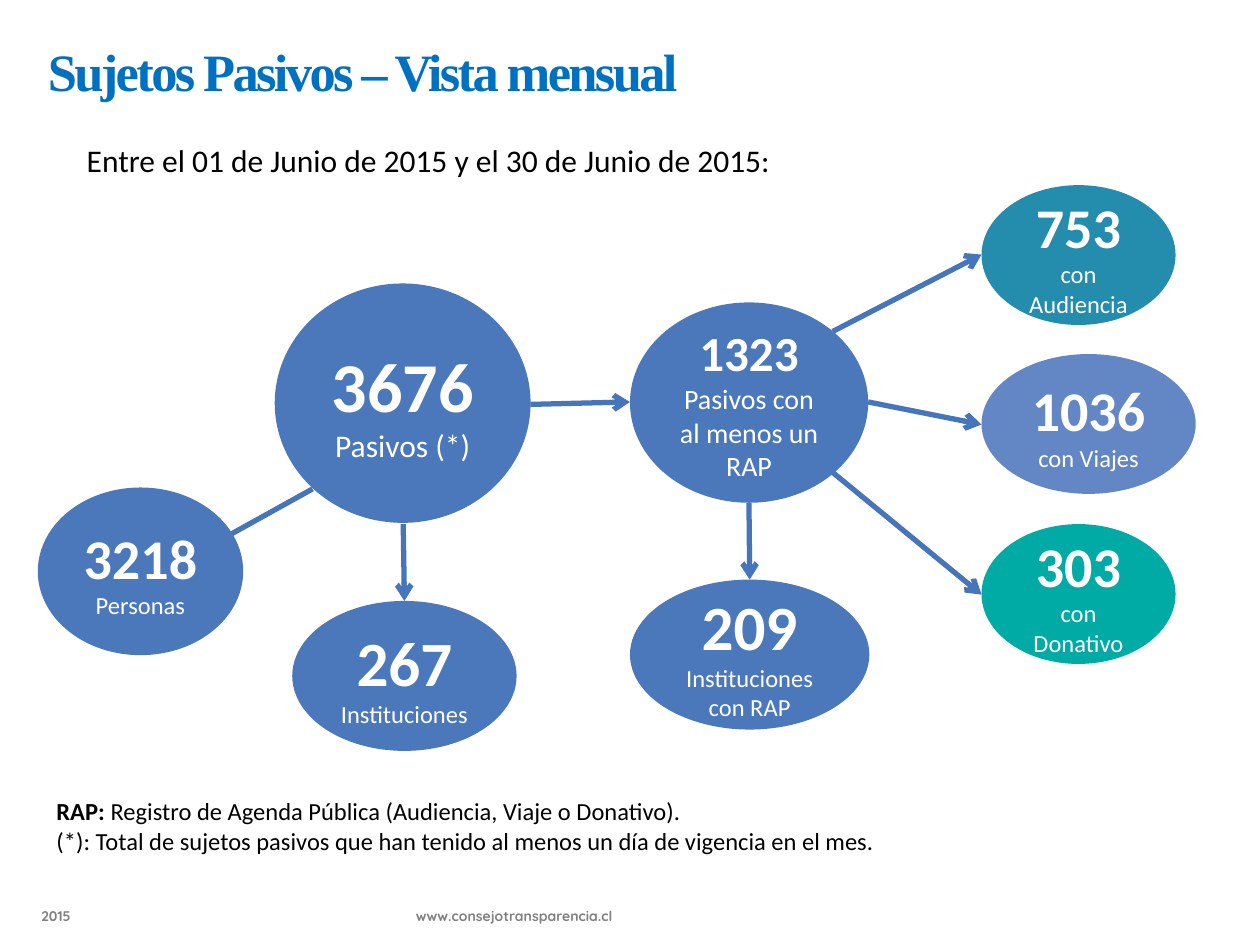
"""Build the monthly overview slide of passive subjects."""
from lxml import etree
from pptx import Presentation
from pptx import util as u
from pptx.dml.color import RGBColor
from pptx.enum import shapes, text
from pptx.oxml.ns import qn

Pt = u.Pt
BLUE, ARROW, WHITE, BLACK = "4A78BB", "4675BA", "FFFFFF", "000000"


def color(value):
    return RGBColor.from_string(value)


def add_run(paragraph, wording, size, ink, bold=False, face="Calibri"):
    run = paragraph.add_run()
    run.text = wording
    run.font.size = Pt(size)
    run.font.bold = bold
    run.font.name = face
    run.font.color.rgb = color(ink)
    return run


deck = Presentation()
deck.slide_width, deck.slide_height = Pt(720), Pt(540)
slide = deck.slides.add_slide(deck.slide_layouts[6])

frames = []
for left, top, width, height in [
    (20.2, 18.7, 663, 44),
    (42.5, 77, 584, 29),
    (25.2, 451.4, 584, 41),
    (16.6, 514.8, 703.4, 25),
]:
    frame = slide.shapes.add_textbox(Pt(left), Pt(top), Pt(width), Pt(height)).text_frame
    frame.word_wrap = True
    frame.auto_size = text.MSO_AUTO_SIZE.SHAPE_TO_FIT_TEXT
    frames.append(frame)
title, period, notes, footer = frames

heading = add_run(title.paragraphs[0], "Sujetos Pasivos – Vista mensual", 30, "0070C0", True, "Times New Roman")
heading.font._element.set("spc", "-150")

period.paragraphs[0].alignment = text.PP_ALIGN.JUSTIFY
add_run(period.paragraphs[0], "Entre el 01 de Junio de 2015 y el 30 de Junio de 2015:", 18, BLACK)

add_run(notes.paragraphs[0], "RAP: ", 14, BLACK, True)
add_run(notes.paragraphs[0], "Registro de Agenda Pública (Audiencia, Viaje o Donativo).", 14, BLACK)
add_run(
    notes.add_paragraph(),
    "(*): Total de sujetos pasivos que han tenido al menos un día de vigencia en el mes.",
    14,
    BLACK,
)

footer_line = footer.paragraphs[0]
tabs = etree.SubElement(footer_line._p.get_or_add_pPr(), qn("a:tabLst"))
etree.SubElement(tabs, qn("a:tab"), pos=str(Pt(214)), algn="l")
add_run(footer_line, "2015\twww.consejotransparencia.cl", 8, "808080", True, "Quicksand")

for x1, y1, x2, y2 in [
    (475.9, 189.4, 560.9, 145.5),
    (496.1, 229.7, 560.9, 242.6),
    (475.9, 270, 560.9, 339.8),
    (303.1, 231.1, 360, 229.7),
    (428, 287.3, 428.4, 331.2),
    (230.4, 299.5, 231.1, 343.4),
    (178.6, 279.4, 120.2, 311.8),
]:
    link = slide.shapes.add_connector(shapes.MSO_CONNECTOR.STRAIGHT, Pt(x1), Pt(y1), Pt(x2), Pt(y2))
    link.line.color.rgb = color(ARROW)
    link.line.width = Pt(3)
    etree.SubElement(link.line._get_or_add_ln(), qn("a:tailEnd"), type="arrow")
    etree.SubElement(link._element.spPr, qn("a:effectLst"))

for left, top, width, height, fill, count, count_size, label, label_size in [
    (157, 162, 146.2, 136.8, BLUE, "3676", 40, "Pasivos (*)", 18),
    (360, 172.8, 136.1, 114.5, BLUE, "1323", 28, "Pasivos con al menos un RAP", 16),
    (560.9, 105.8, 110.9, 79.9, "248CAD", "753", 32, "con Audiencia", 14),
    (560.9, 202.3, 122.4, 79.9, "6387C5", "1036", 32, "con Viajes", 14),
    (560.9, 299.5, 110.9, 79.9, "00AAA5", "303", 32, "con Donativo", 14),
    (360, 331.2, 136.8, 85.7, BLUE, "209", 36, "Instituciones con RAP", 14),
    (167, 343.4, 128.2, 85.7, BLUE, "267", 36, "Instituciones", 14),
    (21.6, 278.6, 117.4, 95.8, BLUE, "3218", 32, "Personas", 14),
]:
    group = slide.shapes.add_shape(shapes.MSO_SHAPE.OVAL, Pt(left), Pt(top), Pt(width), Pt(height))
    group.shadow.inherit = False
    group.fill.solid()
    group.fill.fore_color.rgb = color(fill)
    group.line.fill.background()
    frame = group.text_frame
    frame.word_wrap = True
    frame.vertical_anchor = text.MSO_ANCHOR.MIDDLE
    add_run(frame.paragraphs[0], count, count_size, WHITE, True)
    add_run(frame.add_paragraph(), label, label_size, WHITE)
    for paragraph in frame.paragraphs:
        paragraph.alignment = text.PP_ALIGN.CENTER

deck.save("out.pptx")
